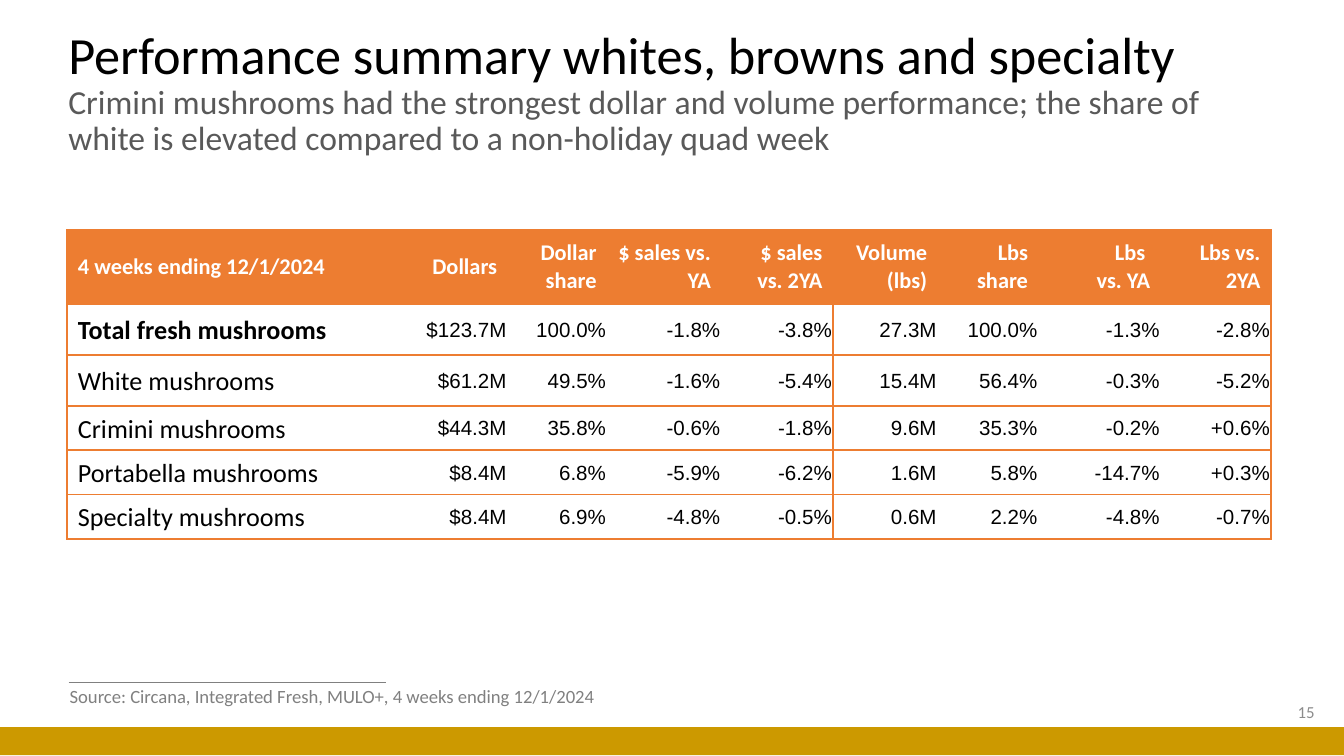
"""Build the mushroom performance summary slide."""
from lxml.etree import SubElement
from pptx import Presentation
from pptx.dml.color import RGBColor
from pptx.enum.shapes import MSO_CONNECTOR, MSO_SHAPE
from pptx.enum.text import MSO_ANCHOR, PP_ALIGN
from pptx.oxml.ns import qn
from pptx.util import Inches, Pt

ORANGE = RGBColor(0xED, 0x7D, 0x31)
GOLD = RGBColor(0xCC, 0x99, 0x00)
BLACK = RGBColor(0, 0, 0)
WHITE = RGBColor(0xFF, 0xFF, 0xFF)
DARK = RGBColor(0x59, 0x59, 0x59)
GRAY = RGBColor(0x80, 0x80, 0x80)
PALE = RGBColor(0x8C, 0x8C, 0x8C)
PLAIN = "{2D5ABB26-0587-4C30-8999-92F81FD0307C}"

COLS = [2.37, 0.91, 0.74, 0.85, 0.83, 0.78, 0.75, 0.91, 0.82]
HEIGHTS = [0.55, 0.38, 0.38, 0.33, 0.33, 0.33]
LEFTS, RIGHTS = (0, 5), (4, 8)
DATA = [
    ["4 weeks ending 12/1/2024", "Dollars", "Dollar share", "$ sales vs. YA",
     "$ sales vs. 2YA", "Volume (lbs)", "Lbs\nshare", "Lbs \vvs. YA",
     "Lbs vs. 2YA"],
    ["Total fresh mushrooms", "$123.7M", "100.0%", "-1.8%", "-3.8%",
     "27.3M", "100.0%", "-1.3%", "-2.8%"],
    ["White mushrooms", "$61.2M", "49.5%", "-1.6%", "-5.4%",
     "15.4M", "56.4%", "-0.3%", "-5.2%"],
    ["Crimini mushrooms", "$44.3M", "35.8%", "-0.6%", "-1.8%",
     "9.6M", "35.3%", "-0.2%", "+0.6%"],
    ["Portabella mushrooms", "$8.4M", "6.8%", "-5.9%", "-6.2%",
     "1.6M", "5.8%", "-14.7%", "+0.3%"],
    ["Specialty mushrooms", "$8.4M", "6.9%", "-4.8%", "-0.5%",
     "0.6M", "2.2%", "-4.8%", "-0.7%"],
]


def write(para, text, size=12, color=BLACK, font="Calibri", bold=False,
          align=PP_ALIGN.LEFT, space=None, after=None):
    para.alignment = align
    if space:
        para.line_spacing = space
    if after:
        para.space_after = Pt(after)
    for i, part in enumerate(text.split("\v")):
        if i:
            para.add_line_break()
        if part:
            run = para.add_run()
            run.text = part
            run.font.size = Pt(size)
            run.font.name = font
            run.font.bold = bold
            run.font.color.rgb = color


def add_box(slide, left, top, width, height, anchor=MSO_ANCHOR.MIDDLE,
            wrap=True):
    box = slide.shapes.add_textbox(Inches(left), Inches(top),
                                   Inches(width), Inches(height))
    frame = box.text_frame
    frame.word_wrap = wrap
    frame.vertical_anchor = anchor
    return frame.paragraphs[0]


def add_bar(slide):
    bar = slide.shapes.add_shape(MSO_SHAPE.RECTANGLE, 0, Inches(5.41),
                                 Inches(10), Inches(0.21))
    bar.shadow.inherit = False
    bar.fill.solid()
    bar.fill.fore_color.rgb = GOLD
    bar.line.fill.background()


def add_rule(slide):
    rule = slide.shapes.add_connector(MSO_CONNECTOR.STRAIGHT, Inches(0.51),
                                      Inches(5.08), Inches(2.87), Inches(5.08))
    rule.line.color.rgb = GRAY
    rule.line.width = Pt(0.5)
    SubElement(rule.element.spPr, qn("a:effectLst"))


def add_edge(cell, side, shown):
    props = cell._tc.get_or_add_tcPr()
    edge = SubElement(props, qn(f"a:ln{side}"), w=str(Pt(1)))
    if shown:
        fill = SubElement(edge, qn("a:solidFill"))
        SubElement(fill, qn("a:srgbClr"), val=str(ORANGE))
    else:
        SubElement(edge, qn("a:noFill"))


def fill_cell(cell, text, row, col):
    edges = {"L": col in LEFTS, "R": col in RIGHTS, "T": True, "B": True}
    for side, shown in edges.items():
        add_edge(cell, side, shown)
    head, label = row == 0, col == 0
    if head:
        cell.fill.solid()
        cell.fill.fore_color.rgb = ORANGE
    else:
        cell.fill.background()
    pad = 0.08 if head or label else 0.01
    cell.margin_left = cell.margin_right = Inches(pad)
    cell.margin_top = Inches(0 if head or label else 0.01)
    cell.margin_bottom = 0
    cell.vertical_anchor = MSO_ANCHOR.MIDDLE
    if head:
        style = dict(size=12, color=WHITE, bold=True)
    elif label:
        style = dict(size=14, bold=row == 1, space=1.07, after=8)
    else:
        style = dict(size=11, font="Arial")
    style["align"] = PP_ALIGN.LEFT if label else PP_ALIGN.RIGHT
    frame = cell.text_frame
    for i, part in enumerate(text.split("\n")):
        para = frame.add_paragraph() if i else frame.paragraphs[0]
        write(para, part, **style)


def add_grid(slide):
    shape = slide.shapes.add_table(len(DATA), len(COLS), Inches(0.5),
                                   Inches(1.71), Inches(sum(COLS)),
                                   Inches(sum(HEIGHTS)))
    table = shape.table
    table.horz_banding = False
    table._tbl.tblPr.find(qn("a:tableStyleId")).text = PLAIN
    for col, width in zip(table.columns, COLS):
        col.width = Inches(width)
    for row, height in zip(table.rows, HEIGHTS):
        row.height = Inches(height)
    for r, line in enumerate(DATA):
        for c, text in enumerate(line):
            fill_cell(table.cell(r, c), text, r, c)


def main():
    deck = Presentation()
    deck.slide_width = Inches(10)
    deck.slide_height = Inches(10) * 9 // 16
    slide = deck.slides.add_slide(deck.slide_layouts[6])
    add_rule(slide)
    add_bar(slide)
    title = add_box(slide, 0.41, 0.3, 8.85, 0.79)
    write(title, "Performance summary whites, browns and specialty\v",
          size=28, space=0.9)
    write(title, "Crimini mushrooms had the strongest dollar and volume "
          "performance; the share of white is elevated compared to a "
          "non-holiday quad week", size=18, color=DARK, space=0.9)
    write(add_box(slide, 7.63, 5.15, 2.25, 0.3), "15", size=9, color=PALE,
          align=PP_ALIGN.RIGHT)
    write(add_box(slide, 0.42, 5.05, 4.18, 0.27, MSO_ANCHOR.TOP, False),
          "Source: Circana, Integrated Fresh, MULO+, 4 weeks ending 12/1/2024",
          size=10, color=GRAY)
    add_grid(slide)
    deck.save("out.pptx")


if __name__ == "__main__":
    main()
